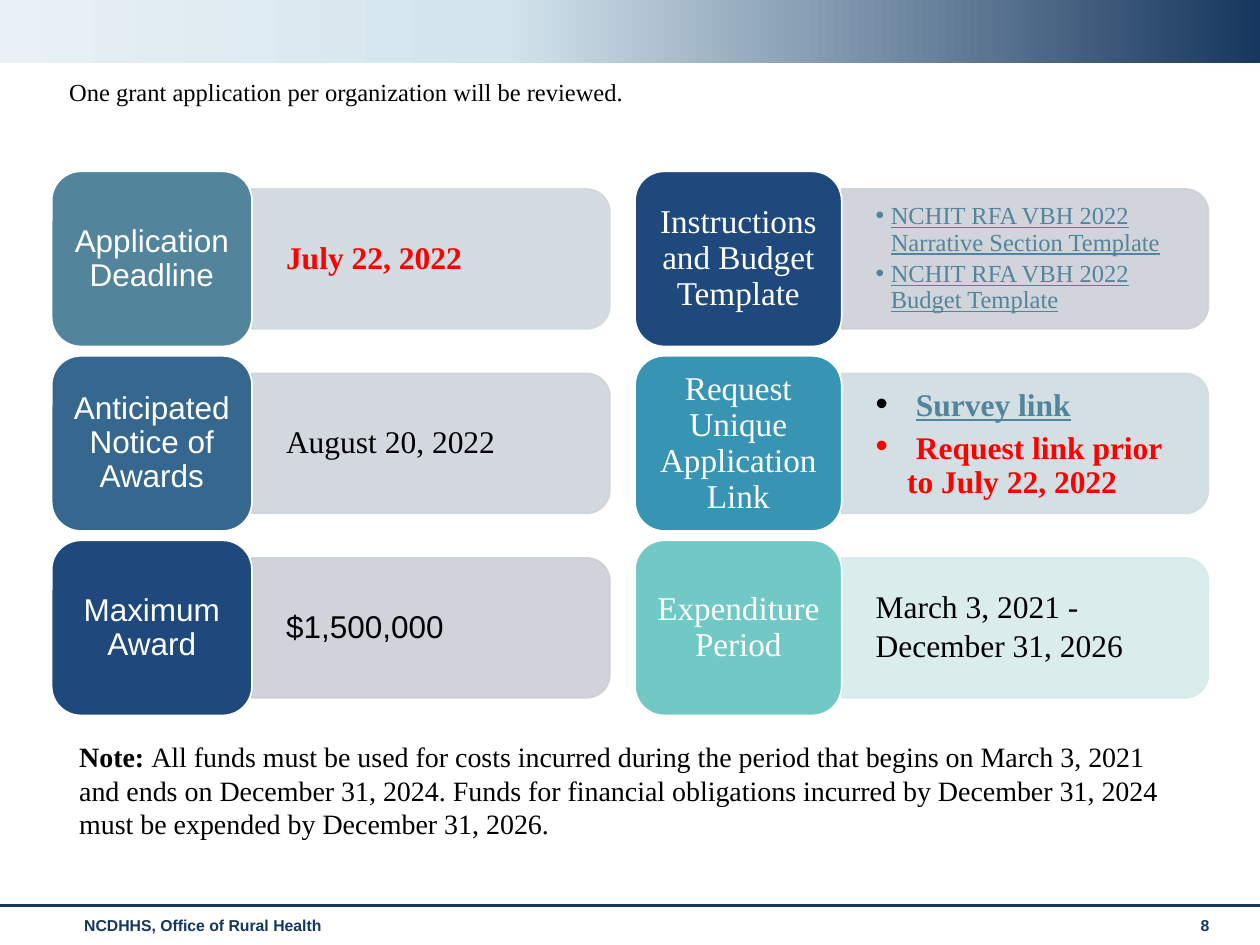
from copy import deepcopy
from dataclasses import dataclass

from lxml import etree
from pptx import Presentation
from pptx.dml.color import RGBColor
from pptx.enum.shapes import MSO_CONNECTOR, MSO_SHAPE
from pptx.enum.text import MSO_ANCHOR, PP_ALIGN
from pptx.oxml.ns import qn
from pptx.util import Inches, Pt

LINE = MSO_CONNECTOR.STRAIGHT
RECTANGLE = MSO_SHAPE.RECTANGLE
TILE = MSO_SHAPE.ROUNDED_RECTANGLE
PANEL = MSO_SHAPE.ROUND_2_SAME_RECTANGLE
TOP, MIDDLE = MSO_ANCHOR.TOP, MSO_ANCHOR.MIDDLE
LEFT, CENTER = PP_ALIGN.LEFT, PP_ALIGN.CENTER


@dataclass(frozen=True)
class Theme:
    serif: str = "Times New Roman"
    sans: str = "Arial"
    white: str = "FFFFFF"
    black: str = "000000"
    red: str = "FF0000"
    link: str = "52849C"
    navy: str = "17375E"
    footer: str = "15365E"
    banner: tuple = ((0, "17375E"), (0.6, "D3E4ED"), (1, "E9F1F6"))
    footer_size: float = 9
    small: float = 14
    note: float = 16
    body: float = 18
    label: float = 19
    large: float = 20


THEME = Theme()


@dataclass(frozen=True)
class Run:
    text: str
    size: float = THEME.body
    font: str = THEME.serif
    color: str = THEME.black
    bold: bool = False
    underline: bool = False


class SlideBuilder:
    """Places elements on a grid of 100 columns and 75 rows."""

    def __init__(self, presentation, theme):
        self.theme = theme
        self.slide = presentation.slides.add_slide(presentation.slide_layouts[6])
        self.column = presentation.slide_width / 100
        self.row = presentation.slide_height / 75

    def box(self, left, top, width, height):
        return (int(left * self.column), int(top * self.row),
                int(width * self.column), int(height * self.row))

    def shape(self, kind, area, color=None, line=None):
        shape = self.slide.shapes.add_shape(kind, *self.box(*area))
        shape.shadow.inherit = False
        if color:
            shape.fill.solid()
            shape.fill.fore_color.rgb = RGBColor.from_string(color)
        if line:
            shape.line.color.rgb = RGBColor.from_string(line)
            shape.line.width = Pt(1)
        else:
            shape.line.fill.background()
        return shape

    def banner(self, area):
        shape = self.shape(RECTANGLE, area)
        shape.fill.gradient()
        shape.fill.gradient_angle = 180
        stop_list = shape._element.spPr.find(".//" + qn("a:gsLst"))
        stop_list.append(deepcopy(stop_list[-1]))
        for stop, (position, color) in zip(shape.fill.gradient_stops, self.theme.banner):
            stop.position = position
            stop.color.rgb = RGBColor.from_string(color)

    def rule(self, top, color, width):
        left, y, length, _ = self.box(0, top, 100, 0)
        connector = self.slide.shapes.add_connector(LINE, left, y, left + length, y)
        connector.line.color.rgb = RGBColor.from_string(color)
        connector.line.width = Pt(width)
        etree.SubElement(connector._element.spPr, qn("a:effectLst"))

    def panel(self, area, color):
        """A bar rounded on its right end: an upright shape turned by 90 degrees."""
        left, top, width, height = area
        shift = (width - height) / 2
        shape = self.shape(PANEL, (left + shift, top - shift, height, width), color, color)
        shape.rotation = 90
        for color_element in shape._element.spPr.iter(qn("a:srgbClr")):
            etree.SubElement(color_element, qn("a:alpha"), val="90000")

    def tile(self, area, color, run):
        shape = self.shape(TILE, area, color, self.theme.white)
        self.fill_text(shape.text_frame, [[run]], MIDDLE, (0.07, 0.04), CENTER, 0.9)

    def text(self, area, paragraphs, anchor=TOP, insets=(0.1, 0.05), **style):
        shape = self.slide.shapes.add_textbox(*self.box(*area))
        self.fill_text(shape.text_frame, paragraphs, anchor, insets, **style)

    def fill_text(self, frame, paragraphs, anchor, insets, align=LEFT,
                  spacing=1.0, after=0, bullet_indent=0):
        frame.word_wrap = True
        frame.vertical_anchor = anchor
        frame.margin_left = frame.margin_right = Inches(insets[0])
        frame.margin_top = frame.margin_bottom = Inches(insets[1])
        for index, runs in enumerate(paragraphs):
            paragraph = frame.add_paragraph() if index else frame.paragraphs[0]
            paragraph.alignment = align
            paragraph.line_spacing = spacing
            paragraph.space_after = Pt(after)
            if bullet_indent:
                properties = paragraph._p.get_or_add_pPr()
                properties.set("marL", str(Inches(bullet_indent)))
                properties.set("indent", str(-Inches(bullet_indent)))
                etree.SubElement(properties, qn("a:buFont"), typeface=self.theme.sans)
                etree.SubElement(properties, qn("a:buChar"), char="•")
            for item in runs:
                run = paragraph.add_run()
                run.text = item.text
                run.font.size = Pt(item.size)
                run.font.name = item.font
                run.font.bold = item.bold
                run.font.underline = item.underline
                run.font.color.rgb = RGBColor.from_string(item.color)


def link(text, size=THEME.small, bold=False):
    return Run(text, size, color=THEME.link, bold=bold, underline=True)


# Each card: label, tile colour, panel colour, paragraphs, bullet indent
KEY_DATES = [
    ("Application Deadline", "52849C", "D1D9DE",
     [[Run("July 22, 2022", color=THEME.red, bold=True)]], 0),
    ("Anticipated Notice of Awards", "36688F", "CED4DB", [[Run("August 20, 2022")]], 0),
    ("Maximum Award", "1F497D", "CCCFD7", [[Run("$1,500,000", font=THEME.sans)]], 0),
]
HOW_TO_APPLY = [
    ("Instructions and Budget Template", "1F497D", "CDD0D7",
     [[link("NCHIT RFA VBH 2022 Narrative Section Template")],
      [link("NCHIT RFA VBH 2022 Budget Template")]], 0.12),
    ("Request Unique Application Link", "3894B3", "D0DCE2",
     [[Run(" ", THEME.large), link("Survey link", THEME.body, True)],
      [Run(" ", THEME.large, color=THEME.red),
       Run("Request link prior to July 22, 2022", color=THEME.red, bold=True)]], 0.25),
    ("Expenditure Period", "71C9C5", "D6EBEA",
     [[Run("March 3, 2021 -")], [Run("December 31, 2026")]], 0),
]
# Each group: cards, left, tile width, panel width, label font and size
GROUPS = [
    (HOW_TO_APPLY, 50.4, 16.4, 29.1, THEME.serif, THEME.label),
    (KEY_DATES, 4.1, 15.9, 28.4, THEME.sans, THEME.body),
]
FIRST_ROW, ROW_STEP = 13.6, 14.64
TILE_HEIGHT, PANEL_HEIGHT = 13.9, 11.1


def main():
    presentation = Presentation()
    presentation.slide_width, presentation.slide_height = Inches(10), Inches(7.5)
    builder = SlideBuilder(presentation, THEME)

    # Banner and footer
    builder.banner((0, 0, 100, 5))
    builder.rule(71.9, THEME.navy, 1.75)
    for left, width, text in ((5.7, 87.4, "NCDHHS, Office of Rural Health"), (94.3, 4.4, "8")):
        builder.text((left, 72.2, width, 3),
                     [[Run(text, THEME.footer_size, THEME.sans, THEME.footer, True)]])

    # Cards
    for cards, left, tile_width, panel_width, font, size in GROUPS:
        for index, (label, tile_color, panel_color, paragraphs, indent) in enumerate(cards):
            top = FIRST_ROW + index * ROW_STEP
            panel_left = left + tile_width
            panel_top = top + (TILE_HEIGHT - PANEL_HEIGHT) / 2
            builder.panel((panel_left, panel_top, panel_width, PANEL_HEIGHT), panel_color)
            builder.text((panel_left, panel_top + 0.5, panel_width - 0.5, PANEL_HEIGHT - 1),
                         paragraphs, MIDDLE, (0.27, 0.14), spacing=0.9, after=2.7,
                         bullet_indent=indent)
            builder.tile((left, top, tile_width, TILE_HEIGHT), tile_color,
                         Run(label, size, font, THEME.white))

    # Opening line and note
    builder.text((4.5, 5.6, 93.9, 3.4),
                 [[Run("One grant application per organization will be reviewed.", THEME.small)]])
    builder.text((5.3, 58.2, 89.5, 9.1), [[
        Run("Note: ", THEME.note, bold=True),
        Run("All funds must be used for costs incurred during the period that begins on "
            "March 3, 2021 and ends on December 31, 2024. Funds for financial obligations "
            "incurred by December 31, 2024 must be expended by December 31, 2026.", THEME.note),
    ]])

    presentation.save("out.pptx")


if __name__ == "__main__":
    main()
